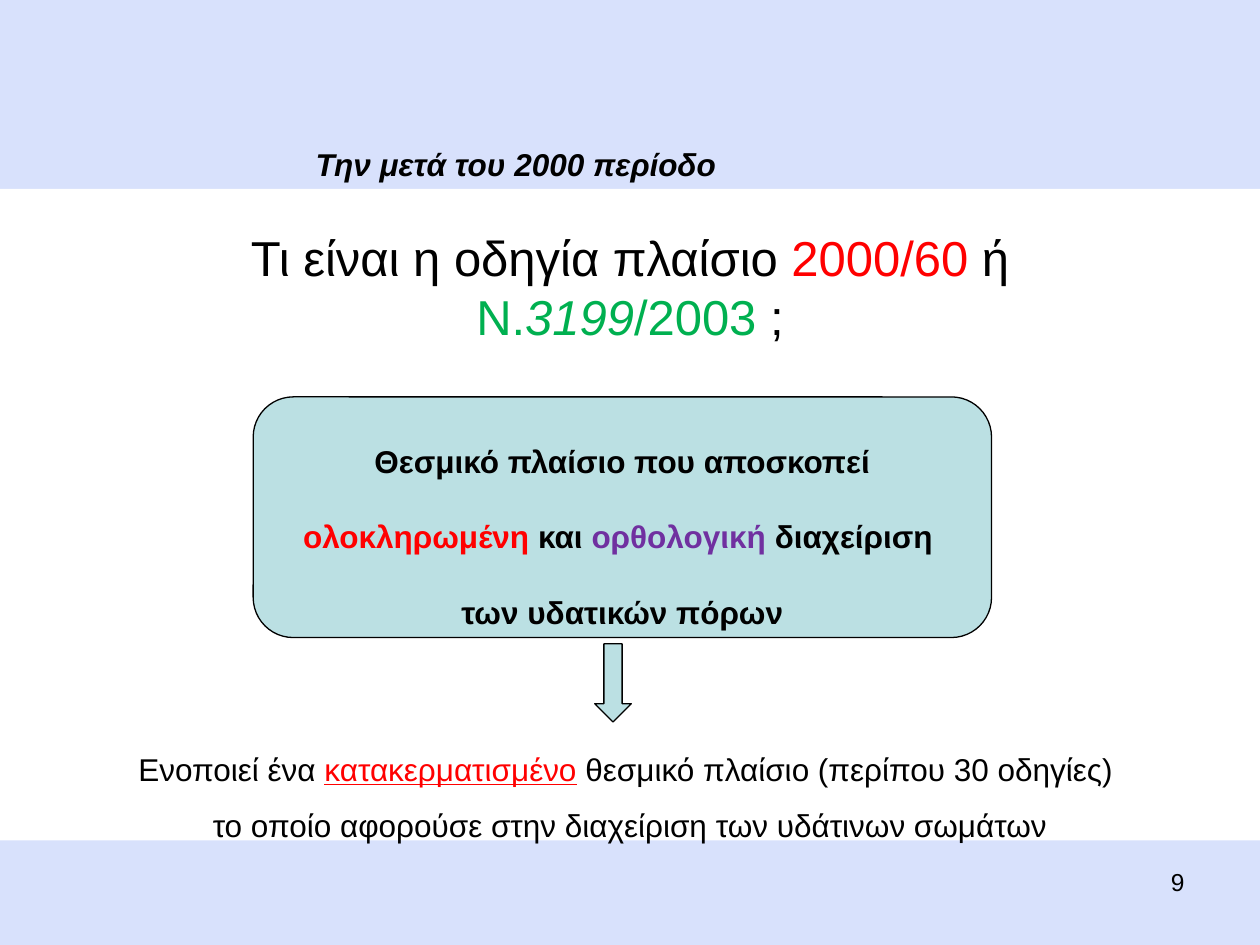
import dataclasses
import typing

import pptx
import pptx.dml.color
import pptx.enum.shapes
import pptx.enum.text
import pptx.util

WIDTH, HEIGHT = pptx.util.Inches(10), pptx.util.Inches(7.5)
COLUMNS, ROWS = 100, 75
BLACK, WHITE, RED, GREEN, PURPLE = "000000", "FFFFFF", "FF0000", "00B050", "7030A0"
BACKGROUND, TEAL = "D8E1FC", "BBE0E3"
SHAPES = pptx.enum.shapes.MSO_SHAPE
ALIGN = pptx.enum.text.PP_ALIGN
AUTO_SIZE = pptx.enum.text.MSO_AUTO_SIZE


class Run(typing.NamedTuple):
    """A stretch of text with its own colour and emphasis."""
    text: str
    color: str = BLACK
    italic: bool | None = None
    underline: bool | None = None


class Area(typing.NamedTuple):
    """A rectangle in columns and rows of the slide grid."""
    column: float
    row: float
    columns: float
    rows: float

    def emu(self) -> tuple[int, int, int, int]:
        """Return left, top, width and height in EMU."""
        col, row = WIDTH / COLUMNS, HEIGHT / ROWS
        return (round(self.column * col), round(self.row * row),
                round(self.columns * col), round(self.rows * row))


@dataclasses.dataclass
class Text:
    """Paragraphs of runs that share one style."""
    paragraphs: list[list[Run]]
    size: float = 18
    bold: bool = False
    italic: bool = False
    spacing: float = 1
    align: ALIGN = ALIGN.CENTER
    wrap: bool = False
    auto_size: AUTO_SIZE = AUTO_SIZE.SHAPE_TO_FIT_TEXT


def rgb(color: str) -> pptx.dml.color.RGBColor:
    """Turn a hex string into a colour."""
    return pptx.dml.color.RGBColor.from_string(color)


def write(tf, text: Text) -> None:
    """Fill a text frame with styled paragraphs."""
    tf.word_wrap = text.wrap
    tf.auto_size = text.auto_size
    for i, runs in enumerate(text.paragraphs):
        p = tf.add_paragraph() if i else tf.paragraphs[0]
        p.alignment = text.align
        p.line_spacing = text.spacing
        p.font.name = "Arial"
        p.font.size = pptx.util.Pt(text.size)
        p.font.bold, p.font.italic = text.bold, text.italic
        for run in runs:
            r = p.add_run()
            r.text = run.text
            r.font.color.rgb = rgb(run.color)
            r.font.italic, r.font.underline = run.italic, run.underline


def add_text(s, area: Area, text: Text) -> None:
    """Add a text box."""
    write(s.shapes.add_textbox(*area.emu()).text_frame, text)


def add_shape(s, kind: SHAPES, area: Area, fill: str, line: str | None = None,
              text: Text | None = None) -> None:
    """Add a preset shape with an optional outline and text."""
    sp = s.shapes.add_shape(kind, *area.emu())
    sp.shadow.inherit = False
    sp.fill.solid()
    sp.fill.fore_color.rgb = rgb(fill)
    if line:
        sp.line.color.rgb = rgb(line)
        sp.line.width = pptx.util.Pt(0.75)
    else:
        sp.line.fill.background()
    if text:
        sp.text_frame.vertical_anchor = pptx.enum.text.MSO_ANCHOR.MIDDLE
        write(sp.text_frame, text)


PERIOD = Text([[Run("Την μετά του 2000 περίοδο")]], bold=True, italic=True)
QUESTION = Text([[Run("Τι είναι η οδηγία πλαίσιο "), Run("2000/60", RED), Run(" ή "),
                  Run("Ν.", GREEN), Run("3199", GREEN, italic=True),
                  Run("/2003", GREEN), Run(" ;")]], size=28, wrap=True)
PURPOSE = Text([[Run("Θεσμικό πλαίσιο που αποσκοπεί")],
                [Run("ολοκληρωμένη", RED), Run(" και "), Run("ορθολογική ", PURPLE),
                 Run("διαχείριση ")],
                [Run("των υδατικών πόρων")]],
               bold=True, spacing=2, auto_size=AUTO_SIZE.NONE)
RESULT = Text([[Run("Ενοποιεί ένα "), Run("κατακερματισμένο", RED, underline=True),
                Run(" θεσμικό πλαίσιο (περίπου 30 οδηγίες) ")],
               [Run("το οποίο αφορούσε στην διαχείριση των υδάτινων σωμάτων")]],
              spacing=1.5)
NUMBER = Text([[Run("9")]], size=14, align=ALIGN.RIGHT, wrap=True,
              auto_size=AUTO_SIZE.NONE)


def main() -> None:
    """Build the slide and save it."""
    prs = pptx.Presentation()
    prs.slide_width, prs.slide_height = WIDTH, HEIGHT
    s = prs.slides.add_slide(prs.slide_layouts[6])
    s.background.fill.solid()
    s.background.fill.fore_color.rgb = rgb(BACKGROUND)
    add_shape(s, SHAPES.RECTANGLE, Area(0, 15, COLUMNS, 51.7), WHITE)
    add_text(s, Area(71.7, 68.3, 23.3, 5.2), NUMBER)
    add_text(s, Area(13, 17.6, 74, 10.4), QUESTION)
    add_shape(s, SHAPES.ROUNDED_RECTANGLE, Area(20.1, 31.5, 58.6, 19.1),
              TEAL, BLACK, PURPOSE)
    add_shape(s, SHAPES.DOWN_ARROW, Area(47.2, 51.1, 2.9, 6.2), TEAL, BLACK)
    add_text(s, Area(9.6, 57.5, 80.8, 10.1), RESULT)
    add_text(s, Area(23.9, 11, 34.1, 4), PERIOD)
    prs.save("out.pptx")


if __name__ == "__main__":
    main()
